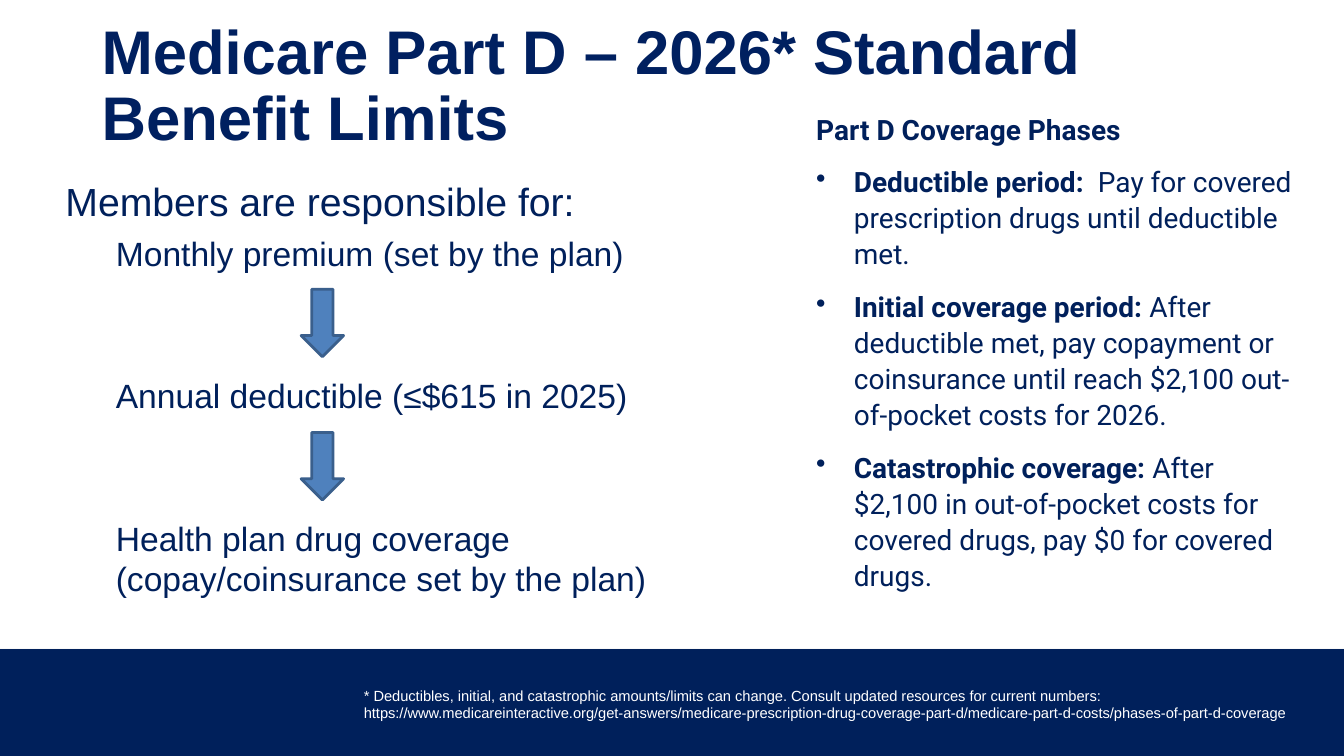
"""Build the slide on the 2026 standard benefit limits of Medicare Part D."""
from dataclasses import dataclass

import lxml.etree
import pptx
import pptx.dml.color
import pptx.enum.shapes
import pptx.enum.text
import pptx.oxml.ns
import pptx.util

Cm = pptx.util.Cm
Pt = pptx.util.Pt


@dataclass
class Theme:
    title: str = "002060"
    navy: str = "00205B"
    pale: str = "F8F8F8"
    white: str = "FFFFFF"
    arrow: str = "4F81BD"
    arrow_line: str = "3A5F8C"
    sans: str = "Arial"
    side: str = "Roboto"
    title_size: float = 44
    lead_size: float = 28
    step_size: float = 24
    phase_size: float = 20
    note_size: float = 10.5


theme = Theme()
deck = pptx.Presentation()
deck.slide_width = Cm(33.87)
deck.slide_height = Cm(19.05)
page = deck.slides.add_slide(deck.slide_layouts[6])
rgb = pptx.dml.color.RGBColor.from_string


def add_box(left, top, width, height, top_inset=0.13):
    box = page.shapes.add_textbox(Cm(left), Cm(top), Cm(width), Cm(height))
    box.text_frame.word_wrap = True
    box.text_frame.margin_top = Cm(top_inset)
    return box.text_frame


def add_span(para, text, font, size, color, bold=False):
    span = para.add_run()
    span.text = text
    span.font.name = font
    span.font.size = Pt(size)
    span.font.bold = bold
    span.font.color.rgb = rgb(color)


for top, color in ((16.33, theme.pale), (16.36, theme.navy)):
    band = page.shapes.add_shape(
        pptx.enum.shapes.MSO_SHAPE.RECTANGLE,
        0, Cm(top), deck.slide_width, deck.slide_height - Cm(top))
    band.shadow.inherit = False
    band.fill.solid()
    band.fill.fore_color.rgb = rgb(color)
    band.line.fill.background()

title = add_box(2.31, 0.36, 28.6, 3.68)
title.vertical_anchor = pptx.enum.text.MSO_ANCHOR.MIDDLE
title.paragraphs[0].line_spacing = 0.9
add_span(title.paragraphs[0], "Medicare Part D – 2026* Standard Benefit Limits",
         theme.sans, theme.title_size, theme.title, True)

members = add_box(1.4, 4.24, 16.15, 11.38, 0.23)
add_span(members.paragraphs[0], "Members are responsible for:",
         theme.sans, theme.lead_size, theme.navy)
steps = (
    ("Monthly premium (set by the plan)", 6),
    ("Annual deductible (≤$615 in 2025)", 73),
    ("Health plan drug coverage (copay/coinsurance set by the plan)", 73),
)
for text, gap in steps:
    para = members.add_paragraph()
    para.space_before = Pt(gap)
    para._p.get_or_add_pPr().set("marL", str(Cm(1.27)))
    add_span(para, text, theme.sans, theme.step_size, theme.navy)

for top in (7.29, 10.9):
    arrow = page.shapes.add_shape(
        pptx.enum.shapes.MSO_SHAPE.DOWN_ARROW, Cm(7.59), Cm(top), Cm(1.07), Cm(1.7))
    arrow.shadow.inherit = False
    arrow.fill.solid()
    arrow.fill.fore_color.rgb = rgb(theme.arrow)
    arrow.line.color.rgb = rgb(theme.arrow_line)
    arrow.line.width = Pt(2)

phases = add_box(20.32, 2.57, 12.52, 13.49, 0.2)
heading = phases.paragraphs[0]
heading.line_spacing = 1.07
heading.space_after = Pt(8)
add_span(heading, "Part D Coverage Phases", theme.side, theme.phase_size, theme.navy, True)
coverage = (
    ("Deductible period:",
     "  Pay for covered prescription drugs until deductible met."),
    ("Initial coverage period: ",
     "After deductible met, pay copayment or coinsurance until reach $2,100 "
     "out-of-pocket costs for 2026."),
    ("Catastrophic coverage: ",
     "After $2,100 in out-of-pocket costs for covered drugs, pay $0 for covered drugs."),
)
for name, rule in coverage:
    para = phases.add_paragraph()
    settings = para._p.get_or_add_pPr()
    settings.set("marL", str(Cm(0.95)))
    settings.set("indent", str(Cm(-0.95)))
    bullet = lxml.etree.SubElement(settings, pptx.oxml.ns.qn("a:buChar"))
    bullet.set("char", "•")
    para.line_spacing = 1.07
    para.space_before = Pt(4)
    para.space_after = Pt(8)
    add_span(para, name, theme.side, theme.phase_size, theme.navy, True)
    add_span(para, rule, theme.side, theme.phase_size, theme.navy)

note = add_box(8.92, 17.17, 24.41, 1.6)
add_span(note.paragraphs[0],
         "* Deductibles, initial, and catastrophic amounts/limits can change. "
         "Consult updated resources for current numbers: "
         "https://www.medicareinteractive.org/get-answers/"
         "medicare-prescription-drug-coverage-part-d/medicare-part-d-costs/"
         "phases-of-part-d-coverage",
         theme.sans, theme.note_size, theme.white)

deck.save("out.pptx")
